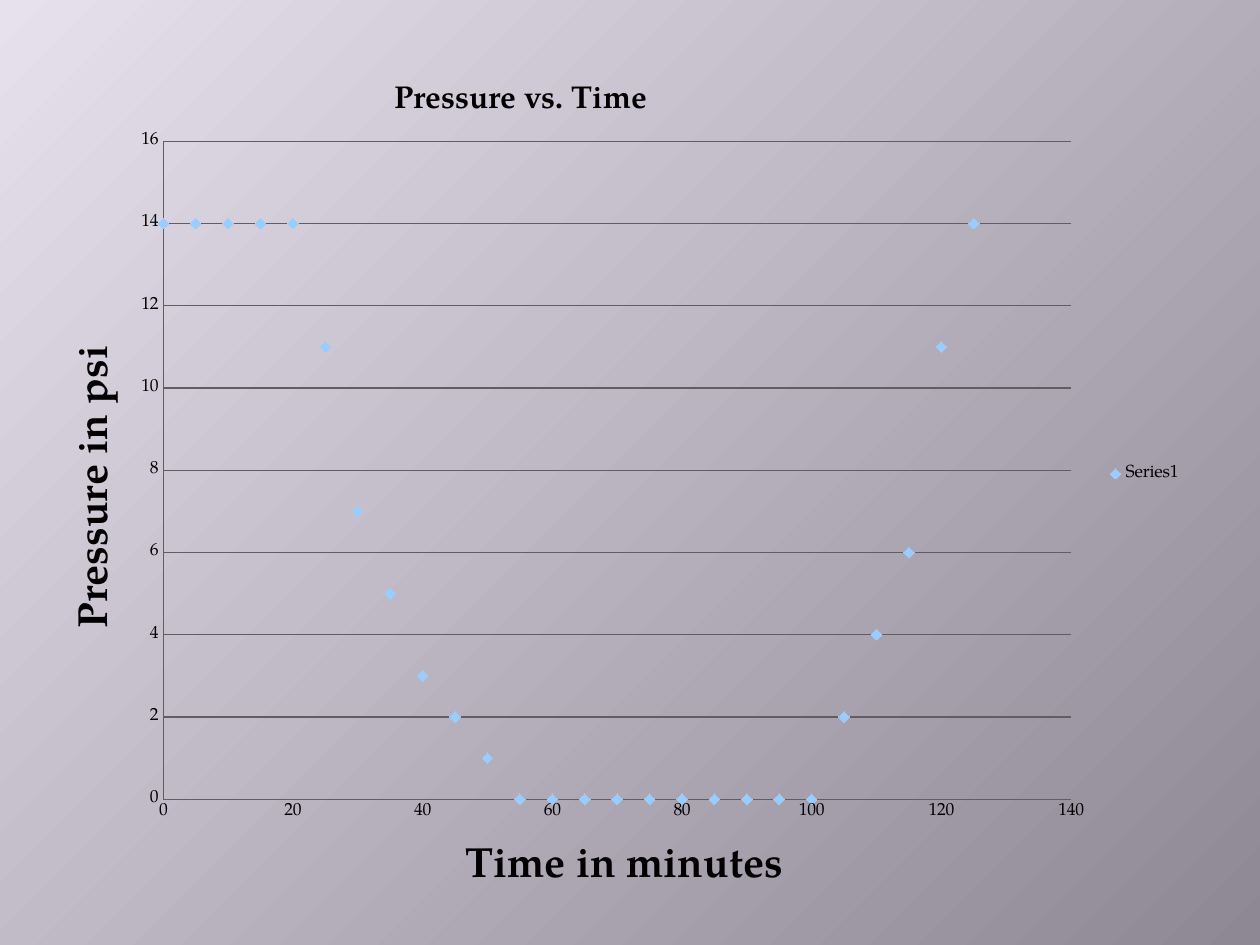
from dataclasses import dataclass

from lxml.etree import SubElement
from pptx import Presentation
from pptx.chart.data import XyChartData
from pptx.dml.color import RGBColor
from pptx.enum.chart import XL_CHART_TYPE, XL_LEGEND_POSITION, XL_MARKER_STYLE, XL_TICK_MARK
from pptx.oxml.ns import qn
from pptx.util import Pt


@dataclass(frozen=True)
class Theme:
    font: str = "TeX Gyre Pagella"
    text: RGBColor = RGBColor(0, 0, 0)
    light: RGBColor = RGBColor(0xE6, 0xE1, 0xEC)
    dark: RGBColor = RGBColor(0x8E, 0x88, 0x95)
    grid: RGBColor = RGBColor(0x62, 0x5D, 0x62)
    marker: RGBColor = RGBColor(0x99, 0xCC, 0xFF)
    label_size: int = 10
    title_size: int = 18
    axis_title_size: int = 24


THEME = Theme()
MINUTES_STEP = 5
PRESSURES = [14] * 5 + [11, 7, 5, 3, 2, 1] + [0] * 10 + [2, 4, 6, 11, 14]


def paint_background(page):
    fill = page.background.fill
    fill.gradient()
    fill.gradient_angle = 315
    for stop, color in zip(fill.gradient_stops, (THEME.light, THEME.dark)):
        stop.color.rgb = color
    fill.gradient_stops[0].position = 0
    fill.gradient_stops[1].position = 1


def place(element, **fractions):
    """Fix a chart part at fractions of the chart's width and height."""
    layout = element.find(qn("c:layout"))
    if layout is None:
        layout = SubElement(element, qn("c:layout"))
        overlay = element.find(qn("c:overlay"))
        if overlay is not None:
            overlay.addprevious(layout)
        else:
            element.insert(0, layout)
    for child in list(layout):
        layout.remove(child)
    manual = SubElement(layout, qn("c:manualLayout"))
    if "w" in fractions:
        SubElement(manual, qn("c:layoutTarget")).set("val", "inner")
    for side in ("x", "y"):
        SubElement(manual, qn(f"c:{side}Mode")).set("val", "edge")
    for name, value in fractions.items():
        SubElement(manual, qn(f"c:{name}")).set("val", str(value))


def style_font(font, size, bold=False):
    font.name = THEME.font
    font.size = Pt(size)
    font.bold = bold
    font.color.rgb = THEME.text


def write_title(title, text, size, x, y):
    para = title.text_frame.paragraphs[0]
    para.text = text
    style_font(para.runs[0].font, size, bold=True)
    place(title.element, x=x, y=y)


def style_line(line):
    line.color.rgb = THEME.grid
    line.width = Pt(0.75)


def style_axis(axis, title, maximum, step, x, y):
    axis.minimum_scale = 0
    axis.maximum_scale = maximum
    axis.major_unit = step
    axis.major_tick_mark = axis.minor_tick_mark = XL_TICK_MARK.NONE
    style_line(axis.format.line)
    write_title(axis.axis_title, title, THEME.axis_title_size, x, y)


def style_series(series):
    series.format.line.fill.background()
    series.marker.style = XL_MARKER_STYLE.DIAMOND
    series.marker.size = 6
    series.marker.format.fill.solid()
    series.marker.format.fill.fore_color.rgb = THEME.marker
    series.marker.format.line.fill.background()


def add_pressure_chart(page):
    data = XyChartData()
    readings = data.add_series("Series1")
    for index, pressure in enumerate(PRESSURES):
        readings.add_data_point(index * MINUTES_STEP, pressure)
    chart = page.shapes.add_chart(
        XL_CHART_TYPE.XY_SCATTER, Pt(24), Pt(24), Pt(660), Pt(498), data
    ).chart
    style_font(chart.font, THEME.label_size)

    chart.has_title = True
    write_title(chart.chart_title, "Pressure vs. Time", THEME.title_size, 0.3, 0.04)
    place(chart.chart_title.element.getparent().find(qn("c:plotArea")),
          x=0.105, y=0.114, w=0.786, h=0.755)

    style_axis(chart.category_axis, "Time in minutes", 140, 20, 0.36, 0.91)
    chart.category_axis.has_major_gridlines = False
    style_axis(chart.value_axis, "Pressure in psi", 16, 2, 0.02, 0.34)
    chart.value_axis.has_major_gridlines = True
    style_line(chart.value_axis.major_gridlines.format.line)

    chart.has_legend = True
    chart.legend.position = XL_LEGEND_POSITION.RIGHT
    chart.legend.include_in_layout = False
    style_font(chart.legend.font, THEME.label_size)
    place(chart.legend._element, x=0.92, y=0.48)

    style_series(chart.plots[0].series[0])


def main():
    deck = Presentation()
    deck.slide_width, deck.slide_height = Pt(720), Pt(540)
    page = deck.slides.add_slide(deck.slide_layouts[6])
    paint_background(page)
    add_pressure_chart(page)
    deck.save("out.pptx")


if __name__ == "__main__":
    main()
